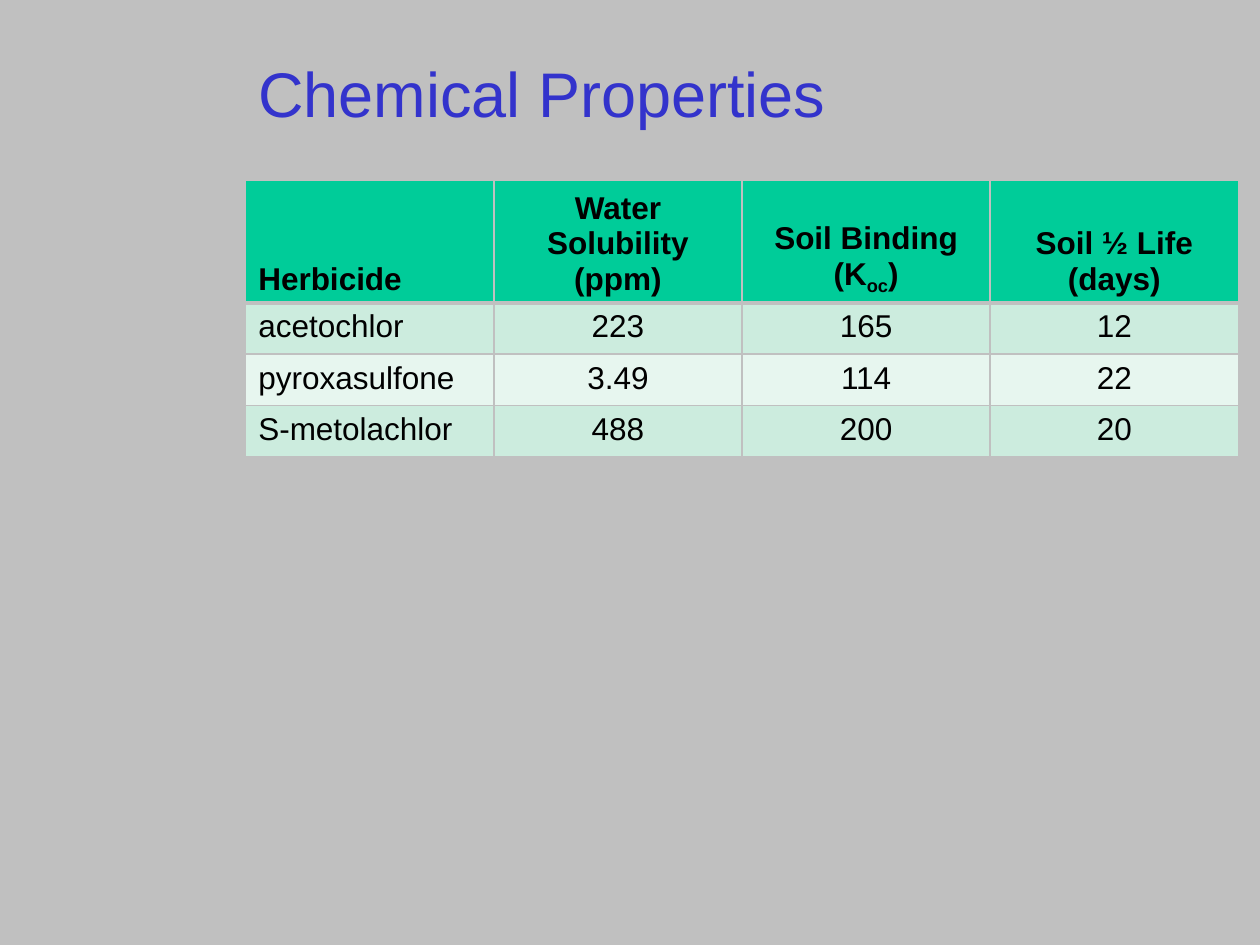
from lxml.etree import SubElement
from pptx import Presentation
from pptx.dml.color import RGBColor
from pptx.enum.text import MSO_ANCHOR, PP_ALIGN
from pptx.oxml.ns import qn
from pptx.util import Pt

TITLE = "Chemical Properties"
# A cell is a list of paragraphs; a tuple holds (text, subscript, text).
HEADER = [
    ["Herbicide"],
    ["Water Solubility", "(ppm)"],
    ["Soil Binding", ("(K", "oc", ")")],
    ["Soil ½ Life", "(days)"],
]
ROWS = [
    ("acetochlor", "223", "165", "12"),
    ("pyroxasulfone", "3.49", "114", "22"),
    ("S-metolachlor", "488", "200", "20"),
]
GRAY, BLUE, BLACK = "C0C0C0", "3333CC", "000000"
HEADER_FILL, BANDS = "00CC99", ("CCECDE", "E7F6EF")
LEFT, TABLE_TOP, COL_W, HEADER_H, ROW_H = 140.4, 103, 141.84, 70.2, 29.2


def paint(fill, color):
    fill.solid()
    fill.fore_color.rgb = RGBColor.from_string(color)


def style(r, size, color, bold=False):
    for name, value in dict(name="Arial", size=Pt(size), bold=bold).items():
        setattr(r.font, name, value)
    r.font.color.rgb = RGBColor.from_string(color)


def add_borders(cell, widths):
    """Draw cell borders; widths are points for left, right, top, bottom."""
    tcPr = cell._tc.get_or_add_tcPr()
    for side, width in zip("LRTB", widths):
        ln = SubElement(tcPr, qn(f"a:ln{side}"), w=str(Pt(width)))
        SubElement(SubElement(ln, qn("a:solidFill")), qn("a:srgbClr"), val=GRAY)


def fill_cell(cell, paragraphs, color, align, header):
    tf = cell.text_frame
    for i, parts in enumerate(paragraphs):
        p = tf.add_paragraph() if i else tf.paragraphs[0]
        p.alignment = align
        for j, text in enumerate([parts] if isinstance(parts, str) else parts):
            r = p.add_run()
            r.text = text
            style(r, 18, BLACK, header)
            if j == 1:
                r._r.get_or_add_rPr().set("baseline", "-25000")
    cell.vertical_anchor = MSO_ANCHOR.BOTTOM if header else MSO_ANCHOR.TOP
    paint(cell.fill, color)


prs = Presentation()
prs.slide_width, prs.slide_height = Pt(720), Pt(540)
s = prs.slides.add_slide(prs.slide_layouts[5])
paint(s.background.fill, GRAY)

title = s.shapes.title
title.left, title.top, title.width, title.height = Pt(LEFT), Pt(8), Pt(574), Pt(90)
tf = title.text_frame
tf.text = TITLE
tf.vertical_anchor = MSO_ANCHOR.MIDDLE
tf.paragraphs[0].alignment = PP_ALIGN.LEFT
style(tf.paragraphs[0].runs[0], 36, BLUE)

grid = [HEADER] + [[[text] for text in row] for row in ROWS]
heights = [HEADER_H] + [ROW_H] * len(ROWS)
table = s.shapes.add_table(len(grid), len(HEADER), Pt(LEFT), Pt(TABLE_TOP),
                           Pt(COL_W * len(HEADER)), Pt(sum(heights))).table
for col in table.columns:
    col.width = Pt(COL_W)
for i, (row, height) in enumerate(zip(grid, heights)):
    table.rows[i].height = Pt(height)
    color = BANDS[(i - 1) % 2] if i else HEADER_FILL
    for j, paragraphs in enumerate(row):
        cell = table.cell(i, j)
        add_borders(cell, (1, 1, 3 if i == 1 else 1, 1 if i else 3))
        fill_cell(cell, paragraphs, color,
                  PP_ALIGN.CENTER if j else PP_ALIGN.LEFT, header=i == 0)

prs.save("out.pptx")
